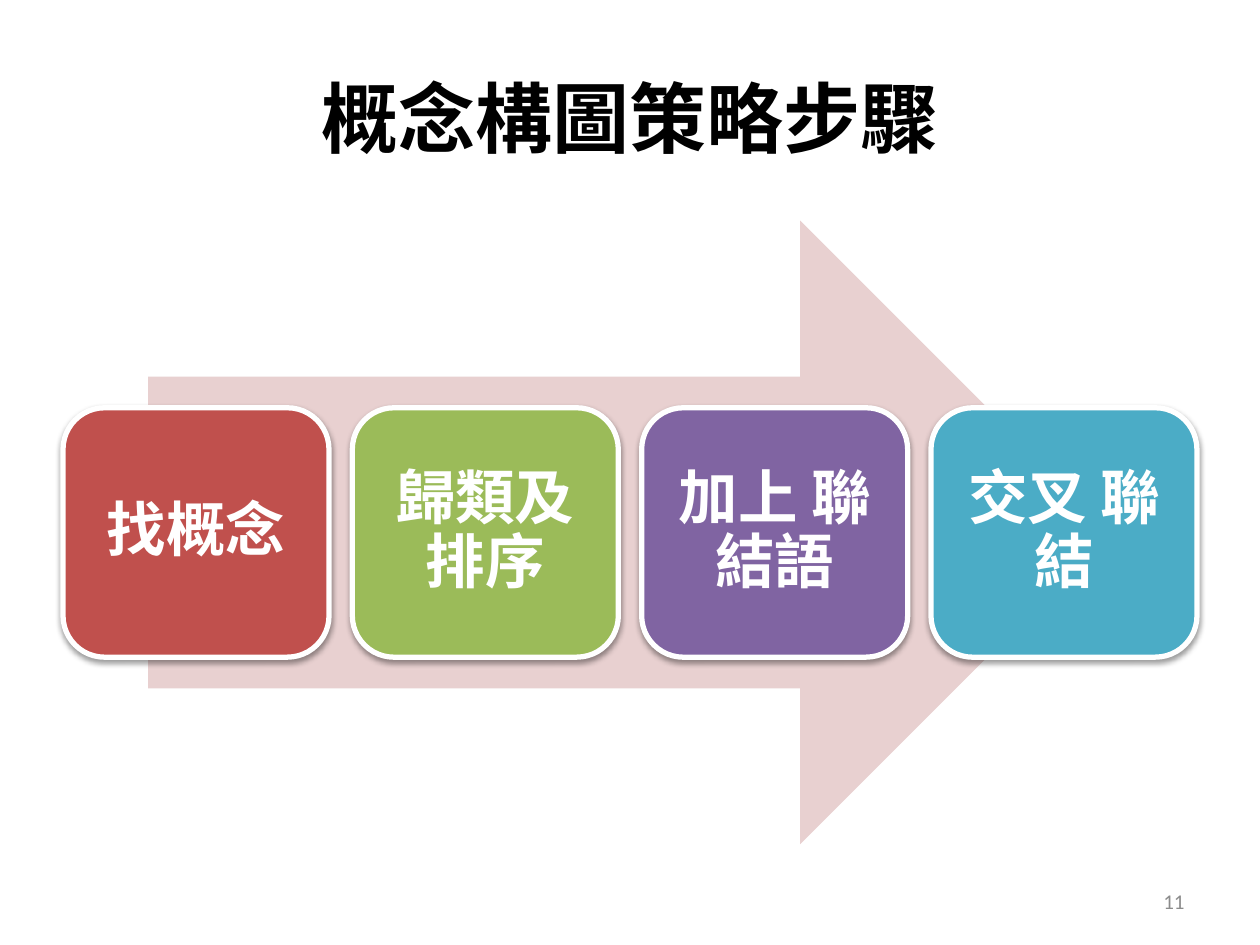
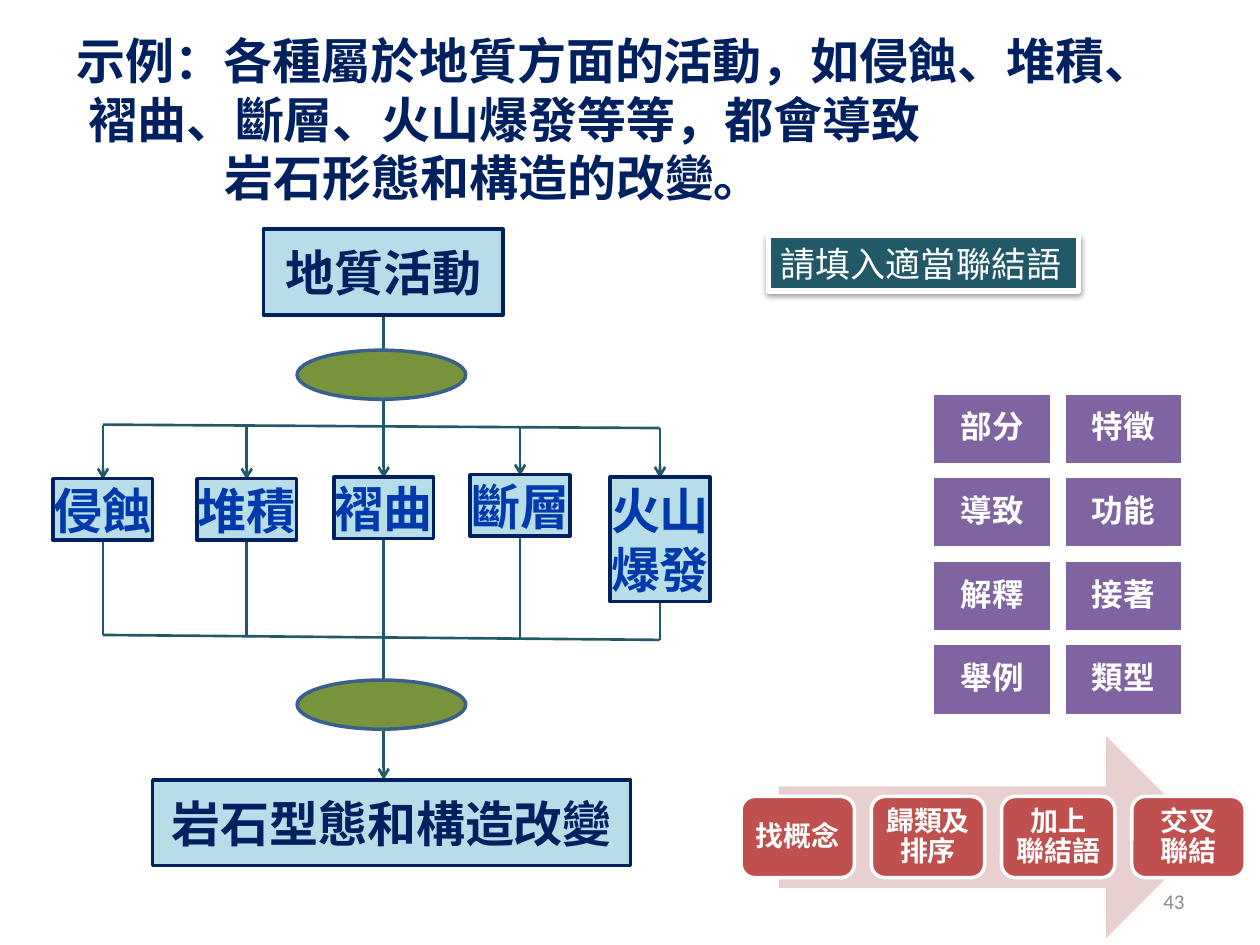
import pptx
import pptx.dml.color
import pptx.enum.shapes
import pptx.enum.text
import pptx.oxml.ns
import pptx.util
from lxml import etree

Cm = pptx.util.Cm
Pt = pptx.util.Pt
SHAPE = pptx.enum.shapes.MSO_SHAPE
ALIGN = pptx.enum.text.PP_ALIGN
ANCHOR = pptx.enum.text.MSO_ANCHOR
qn = pptx.oxml.ns.qn

CJK_FONT = "Noto Sans CJK SC"
NUMBER_FONT = "Calibri"
WHITE, BLACK, GREY = "FFFFFF", "000000", "8C8C8C"
RED, GREEN, PURPLE, AQUA = "C0504D", "9BBB59", "8064A2", "4BACC6"
NAVY, BLUE, PALE_BLUE, TEAL = "002060", "0039AC", "B7DEE8", "215968"
OLIVE, OLIVE_EDGE, PALE_RED = "77933C", "3A5F8C", "E8D0D0"


def rgb(color):
    """Turn a hex string into a colour."""
    return pptx.dml.color.RGBColor.from_string(color)


def write_text(shape, text, size, color, bold=True, font=CJK_FONT, align=ALIGN.CENTER,
               anchor=ANCHOR.MIDDLE, insets=(0.25, 0.13), wrap=True, spacing=None, indents=()):
    """Write one paragraph for each line of text in a shape."""
    frame = shape.text_frame
    frame.word_wrap = wrap
    frame.vertical_anchor = anchor
    frame.margin_left = frame.margin_right = Cm(insets[0])
    frame.margin_top = frame.margin_bottom = Cm(insets[1])
    for index, line in enumerate(text.split("\n")):
        paragraph = frame.paragraphs[0] if index == 0 else frame.add_paragraph()
        paragraph.alignment = align
        if spacing:
            paragraph.line_spacing = spacing
        if indents:
            paragraph._p.get_or_add_pPr().set("marL", str(Cm(indents[index])))
        run = paragraph.add_run()
        run.text = line
        run.font.size = Pt(size)
        run.font.bold = bold
        run.font.name = font
        run.font.color.rgb = rgb(color)
        east_asian = etree.SubElement(run._r.get_or_add_rPr(), qn("a:ea"))
        east_asian.set("typeface", font)


def add_text_box(slide, box, text, size, color, **options):
    """Add a text box at a box given in centimetres."""
    shape = slide.shapes.add_textbox(*map(Cm, box))
    write_text(shape, text, size, color, **options)


def add_block(slide, kind, box, fill, line=None, width=2, shadow=False):
    """Add a filled preset shape at a box given in centimetres."""
    shape = slide.shapes.add_shape(kind, *map(Cm, box))
    shape.shadow.inherit = False
    shape.fill.solid()
    shape.fill.fore_color.rgb = rgb(fill)
    if line:
        shape.line.color.rgb = rgb(line)
        shape.line.width = Pt(width)
    else:
        shape.line.fill.background()
    if shadow:
        effects = shape._element.spPr.find(qn("a:effectLst"))
        outer = etree.SubElement(effects, qn("a:outerShdw"), blurRad="40000", dist="20000",
                                 dir="5400000", rotWithShape="0")
        shade = etree.SubElement(outer, qn("a:srgbClr"), val=BLACK)
        etree.SubElement(shade, qn("a:alpha"), val="38000")
    return shape


def add_link(slide, start, end, arrow=False):
    """Draw a straight line, with an open arrowhead at its end if asked."""
    connector = slide.shapes.add_connector(
        pptx.enum.shapes.MSO_CONNECTOR.STRAIGHT, *map(Cm, start + end))
    connector.line.color.rgb = rgb(TEAL)
    connector.line.width = Pt(1.5)
    if arrow:
        etree.SubElement(connector.line._get_or_add_ln(), qn("a:tailEnd"), type="arrow")
    etree.SubElement(connector._element.spPr, qn("a:effectLst"))


def add_page_number(slide, number):
    """Put the page number at the lower right."""
    add_text_box(slide, (18.21, 17.65, 5.92, 1.02), str(number), 12, GREY,
                 bold=False, font=NUMBER_FONT, align=ALIGN.RIGHT)


def add_step_arrow(slide, box, steps, colors, gap, size, inset, line_width, shadow=False):
    """Lay equal step cards across a wide arrow."""
    left, top, width, height = box
    add_block(slide, SHAPE.RIGHT_ARROW,
              (left + 0.075 * width, top, 0.85 * width, height), PALE_RED)
    card_width = (width - gap * (len(steps) - 1)) / len(steps)
    for index, (step, color) in enumerate(zip(steps, colors)):
        card_box = (left + index * (card_width + gap), top + 0.3 * height,
                    card_width, 0.4 * height)
        card = add_block(slide, SHAPE.ROUNDED_RECTANGLE, card_box, color, WHITE,
                         line_width, shadow)
        write_text(card, step, size, WHITE, insets=(inset, inset), spacing=0.9)


def add_word_grid(slide, box, words, columns=2, gap=0.24):
    """Fill a box with a grid of linking words."""
    left, top, width, height = box
    rows = len(words) // columns
    cell_width = (width - gap * (columns - 1)) / columns
    cell_height = (height - gap * (rows - 1)) / rows
    for index, word in enumerate(words):
        row, column = divmod(index, columns)
        cell_box = (left + column * (cell_width + gap), top + row * (cell_height + gap),
                    cell_width, cell_height)
        cell = add_block(slide, SHAPE.RECTANGLE, cell_box, PURPLE, WHITE)
        write_text(cell, word, 18, WHITE, insets=(0.18, 0.18), spacing=0.9)


def add_concept_map(slide, box):
    """Draw the geology concept map with two open link ovals."""
    left, top, width, height = box
    node_width, node_height, end_height = 2.01, 1.24, 1.73
    branches = [("侵蝕", 0, 5.03), ("堆積", 2.9, 5.03), ("褶曲", 5.66, 5),
                ("斷層", 8.41, 4.95), ("火山\n爆發", 11.23, 5)]
    first_x, last_x = node_width / 2, width - node_width / 2

    def point(x, y):
        return left + x, top + y

    def bar_height(x, start, end):
        return start + (end - start) * (x - first_x) / (last_x - first_x)

    upper_bar, lower_bar = (3.94, 4.01), (8.18, 8.28)
    for start, end in (upper_bar, lower_bar):
        add_link(slide, point(first_x, start), point(last_x, end))
    middle_x = branches[2][1] + node_width / 2
    add_link(slide, point(middle_x, end_height),
             point(middle_x, bar_height(middle_x, *upper_bar)))
    add_link(slide, point(middle_x, 6), point(middle_x, height - end_height), arrow=True)
    for name, x, y in branches:
        center = x + node_width / 2
        add_link(slide, point(center, bar_height(center, *upper_bar)),
                 point(center, y + 0.02), arrow=True)
        if center != middle_x:
            add_link(slide, point(center, y + 1),
                     point(center, bar_height(center, *lower_bar)))

    nodes = [(name, x, y, node_width, node_height + 1.27 * name.count("\n"), BLUE)
             for name, x, y in branches]
    nodes += [("地質活動", 4.24, 0, 4.83, end_height, NAVY),
              ("岩石型態和構造改變", 2.01, height - end_height, 9.63, end_height, NAVY)]
    for name, x, y, node_w, node_h, color in nodes:
        node = add_block(slide, SHAPE.RECTANGLE, (*point(x, y), node_w, node_h),
                         PALE_BLUE, NAVY)
        write_text(node, name, 28, color, wrap=False)
    for y in (2.44, 9.09):
        add_block(slide, SHAPE.OVAL, (*point(4.92, y), 3.4, 0.99), OLIVE, OLIVE_EDGE)


def build_steps_slide(slide):
    """Build the slide with the four strategy steps."""
    add_text_box(slide, (1.27, 0.76, 22.86, 3.18), "概念構圖策略步驟", 44, BLACK)
    add_step_arrow(slide, (1.27, 4.45, 22.86, 12.57),
                   ["找概念", "歸類及排序", "加上 聯結語", "交叉 聯結"],
                   [RED, GREEN, PURPLE, AQUA], gap=0.47, size=34, inset=0.36,
                   line_width=3, shadow=True)
    add_page_number(slide, 11)


def build_example_slide(slide):
    """Build the slide with the worked geology example."""
    title = "示例：各種屬於地質方面的活動，如侵蝕、堆積、\n褶曲、斷層、火山爆發等等，都會導致\n岩石形態和構造的改變。"
    add_text_box(slide, (1.3, 1.12, 22.86, 3.18), title, 28, NAVY, align=ALIGN.LEFT,
                 anchor=ANCHOR.BOTTOM, indents=(0, 0.23, 2.98))
    add_page_number(slide, 43)
    add_word_grid(slide, (18.8, 7.92, 5.05, 6.5),
                  ["部分", "特徵", "導致", "功能", "解釋", "接著", "舉例", "類型"])
    add_step_arrow(slide, (14.94, 14.83, 10.16, 4.09),
                   ["找概念", "歸類及排序", "加上 聯結語", "交叉 聯結"],
                   [RED] * 4, gap=0.34, size=16, inset=0.18, line_width=2)
    add_concept_map(slide, (1.07, 4.62, 13.23, 12.83))
    hint = add_block(slide, SHAPE.RECTANGLE, (15.49, 4.75, 6.25, 1.12), TEAL, WHITE, 3, True)
    write_text(hint, "請填入適當聯結語", 20, WHITE, bold=False, align=ALIGN.LEFT)


def main():
    """Build and save the presentation."""
    presentation = pptx.Presentation()
    presentation.slide_width, presentation.slide_height = Cm(25.4), Cm(19.05)
    for build in (build_steps_slide, build_example_slide):
        build(presentation.slides.add_slide(presentation.slide_layouts[6]))
    presentation.save("out.pptx")


if __name__ == "__main__":
    main()
